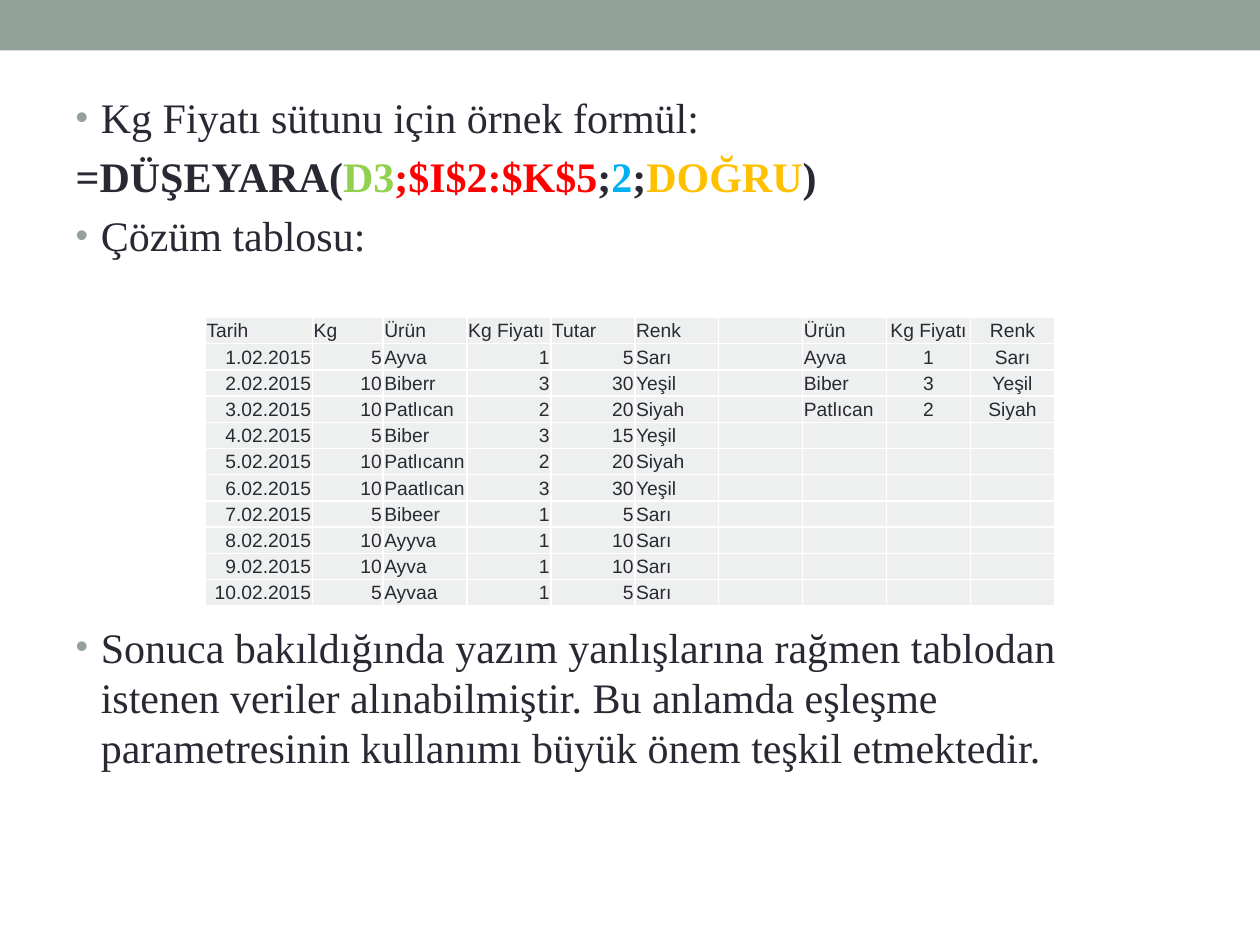
from lxml.etree import SubElement
from pptx import Presentation
from pptx.dml.color import RGBColor
from pptx.enum.shapes import MSO_SHAPE
from pptx.enum.text import MSO_ANCHOR, MSO_AUTO_SIZE, PP_ALIGN
from pptx.oxml.ns import qn
from pptx.util import Inches, Pt

SAGE, INK, PALE, WHITE = "93A299", "292934", "EEF0EF", "FFFFFF"


def color(hex_code):
    return RGBColor.from_string(hex_code)


def format_font(font, size, name, hex_code, bold=False):
    for key, value in {"size": Pt(size), "name": name, "bold": bold}.items():
        setattr(font, key, value)
    font.color.rgb = color(hex_code)


deck = Presentation()
deck.slide_width, deck.slide_height = Inches(10), Inches(7.5)
slide = deck.slides.add_slide(deck.slide_layouts[1])
title = slide.shapes.title.element
title.getparent().remove(title)

# Band along the top edge
band = slide.shapes.add_shape(MSO_SHAPE.RECTANGLE, 0, 0, deck.slide_width, Inches(0.4))
band.shadow.inherit = False
band.fill.solid()
band.fill.fore_color.rgb = color(SAGE)
band.line.fill.background()

# Body text: bullet flag, then spans of text and colour
SIZE = 24
LINE = 1.2 * SIZE
GAP = 0.2 * SIZE
TABLE_GAP = 7 * (LINE + GAP) - LINE  # room for the table between paragraphs
paragraphs = [
    (True, 0, [("Kg Fiyatı sütunu için örnek formül:", INK)]),
    (False, GAP, [("=DÜŞEYARA(", INK), ("D3", "92D050"), (";$I$2:$K$5", "FF0000"),
                  (";", INK), ("2", "00B0F0"), (";", INK), ("DOĞRU", "FFC000"), (")", INK)]),
    (True, GAP, [("Çözüm tablosu:", INK)]),
    (True, TABLE_GAP, [("Sonuca bakıldığında yazım yanlışlarına rağmen tablodan istenen "
                        "veriler alınabilmiştir. Bu anlamda eşleşme parametresinin "
                        "kullanımı büyük önem teşkil etmektedir.", INK)]),
]
body = slide.placeholders[1]
for key, value in {"left": 0.5, "top": 0.68, "width": 9, "height": 6.4}.items():
    setattr(body, key, Inches(value))
frame = body.text_frame
for key, value in {"word_wrap": True, "auto_size": MSO_AUTO_SIZE.NONE,
                   "vertical_anchor": MSO_ANCHOR.TOP, "margin_left": Inches(0.1),
                   "margin_right": Inches(0.15), "margin_top": Inches(0.05)}.items():
    setattr(frame, key, value)

for index, (bulleted, space, spans) in enumerate(paragraphs):
    para = frame.add_paragraph() if index else frame.paragraphs[0]
    properties = para._p.get_or_add_pPr()
    indent = Inches(0.2) if bulleted else 0
    properties.set("marL", str(indent))
    properties.set("indent", str(-indent))
    if bulleted:
        SubElement(SubElement(properties, qn("a:buClr")), qn("a:srgbClr"), val=SAGE)
        SubElement(properties, qn("a:buSzPct"), val="85000")
        SubElement(properties, qn("a:buFont"), typeface="Arial")
        SubElement(properties, qn("a:buChar"), char="•")
    else:
        SubElement(properties, qn("a:buNone"))
    for key, value in {"alignment": PP_ALIGN.LEFT, "line_spacing": Pt(LINE),
                       "space_before": Pt(space), "space_after": Pt(0)}.items():
        setattr(para, key, value)
    for text, hex_code in spans:
        span = para.add_run()
        span.text = text
        format_font(span.font, SIZE, "Times New Roman", hex_code, bold=not bulleted)

# Solution table: sales on the left, lookup list on the right
header = ["Tarih", "Kg", "Ürün", "Kg Fiyatı", "Tutar", "Renk", "", "Ürün", "Kg Fiyatı", "Renk"]
sales = [
    (5, "Ayva", 1, 5, "Sarı"),
    (10, "Biberr", 3, 30, "Yeşil"),
    (10, "Patlıcan", 2, 20, "Siyah"),
    (5, "Biber", 3, 15, "Yeşil"),
    (10, "Patlıcann", 2, 20, "Siyah"),
    (10, "Paatlıcan", 3, 30, "Yeşil"),
    (5, "Bibeer", 1, 5, "Sarı"),
    (10, "Ayyva", 1, 10, "Sarı"),
    (10, "Ayva", 1, 10, "Sarı"),
    (5, "Ayvaa", 1, 5, "Sarı"),
]
lookup = [("Ayva", 1, "Sarı"), ("Biber", 3, "Yeşil"), ("Patlıcan", 2, "Siyah")]
rows = [header]
for day, sale in enumerate(sales, 1):
    match = lookup[day - 1] if day <= len(lookup) else ("", "", "")
    rows.append([f"{day}.02.2015", *sale, "", *match])

WIDTH, HEIGHT, DATE, KG = 6.74, 2.29, 0.85, 0.56
widths = [DATE, KG] + [(WIDTH - DATE - KG) / 8] * 8
alignments = {"l": PP_ALIGN.LEFT, "c": PP_ALIGN.CENTER, "r": PP_ALIGN.RIGHT}
table = slide.shapes.add_table(len(rows), len(header), Inches(1.63), Inches(2.52),
                               Inches(WIDTH), Inches(HEIGHT)).table
table.first_row = table.horz_banding = False
for column, width in zip(table.columns, widths):
    column.width = Inches(width)

for row_index, row in enumerate(rows):
    table.rows[row_index].height = Inches(HEIGHT / len(rows))
    codes = "rrlrrlllcc" if row_index else "llllllllcc"
    for column_index, (value, code) in enumerate(zip(row, codes)):
        cell = table.cell(row_index, column_index)
        for key, setting in {"margin_left": Inches(0.01), "margin_top": Inches(0.01),
                             "margin_right": Inches(0.01), "margin_bottom": 0,
                             "vertical_anchor": MSO_ANCHOR.MIDDLE}.items():
            setattr(cell, key, setting)
        for side in ("lnL", "lnR", "lnT", "lnB"):
            border = SubElement(cell._tc.get_or_add_tcPr(), qn(f"a:{side}"), w=str(Pt(1)))
            SubElement(SubElement(border, qn("a:solidFill")), qn("a:srgbClr"), val=WHITE)
        cell.fill.solid()
        cell.fill.fore_color.rgb = color(PALE)
        para = cell.text_frame.paragraphs[0]
        para.alignment = alignments[code]
        if value == "":
            SubElement(para._p, qn("a:endParaRPr"), sz="1100")
        else:
            span = para.add_run()
            span.text = str(value)
            format_font(span.font, 11, "Arial", INK)

deck.save("out.pptx")
